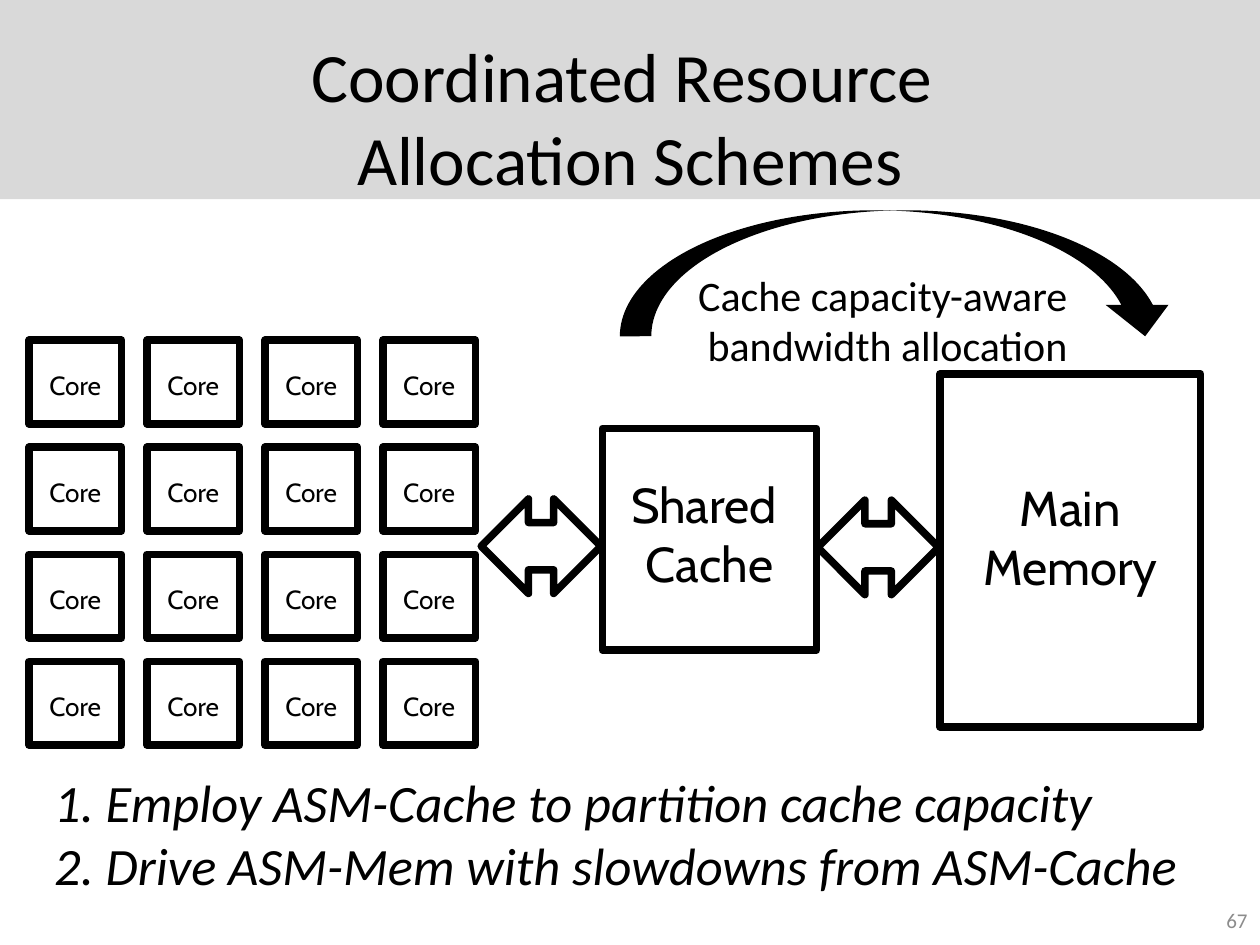
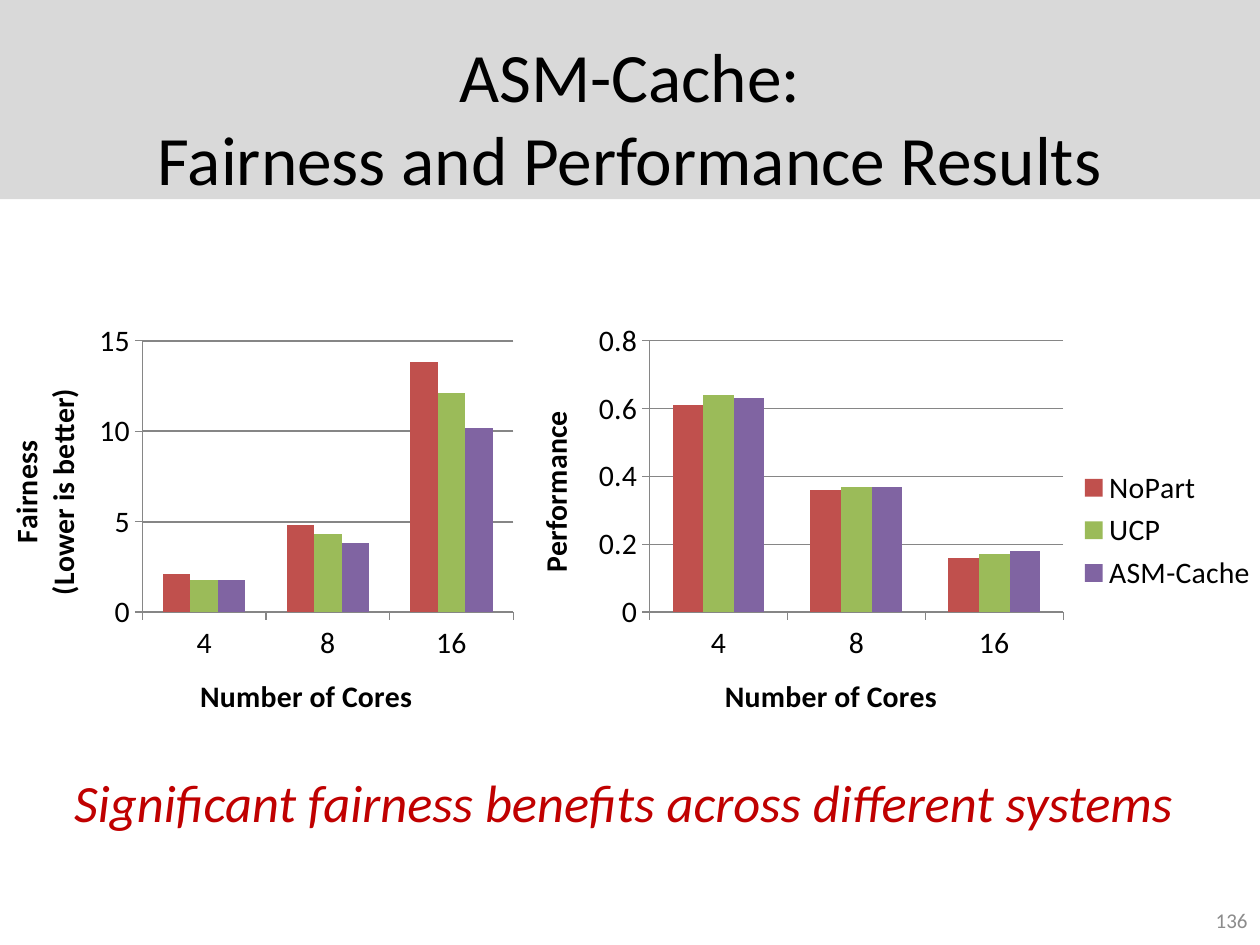
"""Builds two slides on coordinated cache and memory bandwidth allocation."""
import lxml.etree
import pptx
import pptx.chart.data
import pptx.dml.color
import pptx.enum.chart
import pptx.enum.shapes
import pptx.enum.text
import pptx.oxml
import pptx.oxml.ns
import pptx.util

Pt = pptx.util.Pt
RGB = pptx.dml.color.RGBColor
SHAPES = pptx.enum.shapes.MSO_SHAPE
ALIGN = pptx.enum.text.PP_ALIGN
ANCHOR = pptx.enum.text.MSO_ANCHOR
CHART = pptx.enum.chart

BLACK = RGB(0, 0, 0)
BAND_GRAY = RGB(0xD9, 0xD9, 0xD9)
NUMBER_GRAY = RGB(0x8C, 0x8C, 0x8C)
AXIS_GRAY = RGB(0x86, 0x86, 0x86)
RED = RGB(0xC0, 0, 0)
BODY_FONT, DIAGRAM_FONT = "Calibri", "Cabin"

SCHEME_TITLE = ["Coordinated Resource ", "Allocation Schemes"]
RESULT_TITLE = ["ASM-Cache:", "Fairness and Performance Results"]
STEPS = [
    "1. Employ ASM-Cache to partition cache capacity",
    "2. Drive ASM-Mem with slowdowns from ASM-Cache",
]
CAPTION = ["Cache capacity-aware ", "bandwidth allocation"]
CONCLUSION = ["Significant fairness benefits across different systems "]

CORE_GRID = 4
CORE_ORIGIN, CORE_SIZE, CORE_STEP = (16.6, 194.4), (52.8, 47.8), (67.4, 61.2)
MEMORY_UNITS = [
    (["Main Memory"], (537.1, 213.8, 149, 201.6), 16),
    (["Shared ", "Cache"], (344.2, 244.8, 122.4, 126.7), 7),
]
LINKS = [(467.3, 285.8, 69.1, 54), (275, 285.1, 68.4, 54)]

CORE_COUNTS = ["4", "8", "16"]
SCHEMES = [
    ("NoPart", RGB(0xC0, 0x50, 0x4D)),
    ("UCP", RGB(0x9B, 0xBB, 0x59)),
    ("ASM-Cache", RGB(0x80, 0x64, 0xA2)),
]
CHARTS = [
    {
        "box": (-12.2, 180, 311.8, 246.2),
        "plot": {"x": 0.3, "y": 0.06, "w": 0.68, "h": 0.63},
        "axis": ["Fairness", "(Lower is better)"],
        "scale": (15, 5),
        "grid_width": 1.25,
        "legend": False,
        "values": [(2.1, 4.8, 13.8), (1.8, 4.3, 12.1), (1.8, 3.8, 10.2)],
    },
    {
        "box": (288, 180, 437.8, 246.2),
        "plot": {"x": 0.19, "y": 0.06, "w": 0.54, "h": 0.63},
        "axis": ["Performance"],
        "scale": (0.8, 0.2),
        "grid_width": 0.75,
        "legend": True,
        "values": [(0.61, 0.36, 0.16), (0.64, 0.37, 0.17), (0.63, 0.37, 0.18)],
    },
]


def points(box):
    return [Pt(length) for length in box]


def style_font(font, size, color=BLACK, name=BODY_FONT, bold=False, italic=False):
    font.size, font.name, font.bold, font.italic = Pt(size), name, bold, italic
    font.color.rgb = color


def write_lines(frame, lines, size, align=ALIGN.CENTER, **style):
    for index, line in enumerate(lines):
        paragraph = frame.add_paragraph() if index else frame.paragraphs[0]
        paragraph.alignment = align
        run = paragraph.add_run()
        run.text = line
        style_font(run.font, size, **style)


def add_text(slide, box, lines, size, anchor=ANCHOR.TOP, **style):
    frame = slide.shapes.add_textbox(*points(box)).text_frame
    frame.word_wrap = True
    frame.vertical_anchor = anchor
    write_lines(frame, lines, size, **style)


def add_filled(slide, kind, box, color):
    shape = slide.shapes.add_shape(kind, *points(box))
    shape.shadow.inherit = False
    shape.fill.solid()
    shape.fill.fore_color.rgb = color
    shape.line.fill.background()


def add_outlined(slide, kind, box):
    shape = slide.shapes.add_shape(kind, *points(box))
    shape.shadow.inherit = False
    shape.fill.background()
    shape.line.color.rgb = BLACK
    shape.line.width = Pt(4.32)
    line = shape._element.spPr.find(pptx.oxml.ns.qn("a:ln"))
    lxml.etree.SubElement(line, pptx.oxml.ns.qn("a:round"))
    return shape


def add_unit(slide, box, lines, size, top=0, bottom=0):
    frame = add_outlined(slide, SHAPES.RECTANGLE, box).text_frame
    frame.margin_top, frame.margin_bottom = Pt(top), Pt(bottom)
    frame.margin_left = frame.margin_right = Pt(4)
    write_lines(frame, lines, size, name=DIAGRAM_FONT)


def add_base_slide(presentation, title, number):
    slide = presentation.slides.add_slide(presentation.slide_layouts[6])
    add_filled(slide, SHAPES.RECTANGLE, (0, 0, 720, 113.8), BAND_GRAY)
    add_text(slide, (36, 21.6, 648, 90), title, 39.6, ANCHOR.MIDDLE)
    add_text(slide, (552.2, 511.2, 167.8, 28.8), [number], 12, ANCHOR.MIDDLE,
             align=ALIGN.RIGHT, color=NUMBER_GRAY)
    return slide


def place_plot(chart, fractions):
    plot_area = chart._chartSpace.chart.plotArea
    for old in plot_area.findall(pptx.oxml.ns.qn("c:layout")):
        plot_area.remove(old)
    modes = {"layoutTarget": "inner", "xMode": "edge", "yMode": "edge"}
    layout = lxml.etree.Element(pptx.oxml.ns.qn("c:layout"))
    manual = lxml.etree.SubElement(layout, pptx.oxml.ns.qn("c:manualLayout"))
    for tag, value in {**modes, **fractions}.items():
        item = lxml.etree.SubElement(manual, pptx.oxml.ns.qn("c:" + tag))
        item.set("val", str(value))
    plot_area.insert(0, layout)


def add_result_chart(slide, content):
    data = pptx.chart.data.CategoryChartData()
    data.categories = CORE_COUNTS
    for (name, _), values in zip(SCHEMES, content["values"]):
        data.add_series(name, values)
    chart = slide.shapes.add_chart(
        CHART.XL_CHART_TYPE.COLUMN_CLUSTERED, *points(content["box"]), data).chart
    style_font(chart.font, 17)
    chart.has_title = False
    plot = chart.plots[0]
    plot.vary_by_categories = False
    plot.gap_width, plot.overlap = 150, 0
    for series, (_, color) in zip(plot.series, SCHEMES):
        series.format.fill.solid()
        series.format.fill.fore_color.rgb = color

    value_axis = chart.value_axis
    value_axis.minimum_scale = 0
    value_axis.maximum_scale, value_axis.major_unit = content["scale"]
    value_axis.tick_labels.number_format = "General"
    value_axis.tick_labels.number_format_is_linked = False
    value_axis.has_major_gridlines = True
    grid_line = value_axis.major_gridlines.format.line
    grid_line.color.rgb = AXIS_GRAY
    grid_line.width = Pt(content["grid_width"])
    titles = [(chart.category_axis, ["Number of Cores"]), (value_axis, content["axis"])]
    for axis, title in titles:
        axis.major_tick_mark = CHART.XL_TICK_MARK.OUTSIDE
        axis.format.line.color.rgb = AXIS_GRAY
        axis.format.line.width = Pt(0.75)
        write_lines(axis.axis_title.text_frame, title, 17, bold=True)

    chart.has_legend = content["legend"]
    if chart.has_legend:
        chart.legend.position = CHART.XL_LEGEND_POSITION.RIGHT
        chart.legend.include_in_layout = False
        style_font(chart.legend.font, 17)
    place_plot(chart, content["plot"])


def build_scheme_slide(presentation):
    slide = add_base_slide(presentation, SCHEME_TITLE, "67")
    for row in range(CORE_GRID):
        for column in range(CORE_GRID):
            left = CORE_ORIGIN[0] + column * CORE_STEP[0]
            top = CORE_ORIGIN[1] + row * CORE_STEP[1]
            add_unit(slide, (left, top, *CORE_SIZE), ["Core"], 15, top=3)
    for lines, box, bottom in MEMORY_UNITS:
        add_unit(slide, box, lines, 28, bottom=bottom)
    for box in LINKS:
        add_outlined(slide, SHAPES.LEFT_RIGHT_ARROW, box)
    add_filled(slide, SHAPES.CURVED_DOWN_ARROW, (354.2, 120.2, 318.2, 72), BLACK)
    add_text(slide, (354.2, 150.5, 306, 65.5), CAPTION, 24)
    add_text(slide, (23.8, 436.3, 672, 80), STEPS, 30, align=ALIGN.LEFT, italic=True)


def build_result_slide(presentation):
    slide = add_base_slide(presentation, RESULT_TITLE, "136")
    add_text(slide, (23.8, 436.3, 672, 44), CONCLUSION, 30, color=RED, italic=True)
    for content in CHARTS:
        add_result_chart(slide, content)


def main():
    presentation = pptx.Presentation()
    presentation.slide_width, presentation.slide_height = Pt(720), Pt(540)
    build_scheme_slide(presentation)
    build_result_slide(presentation)
    presentation.save("out.pptx")


if __name__ == "__main__":
    main()
